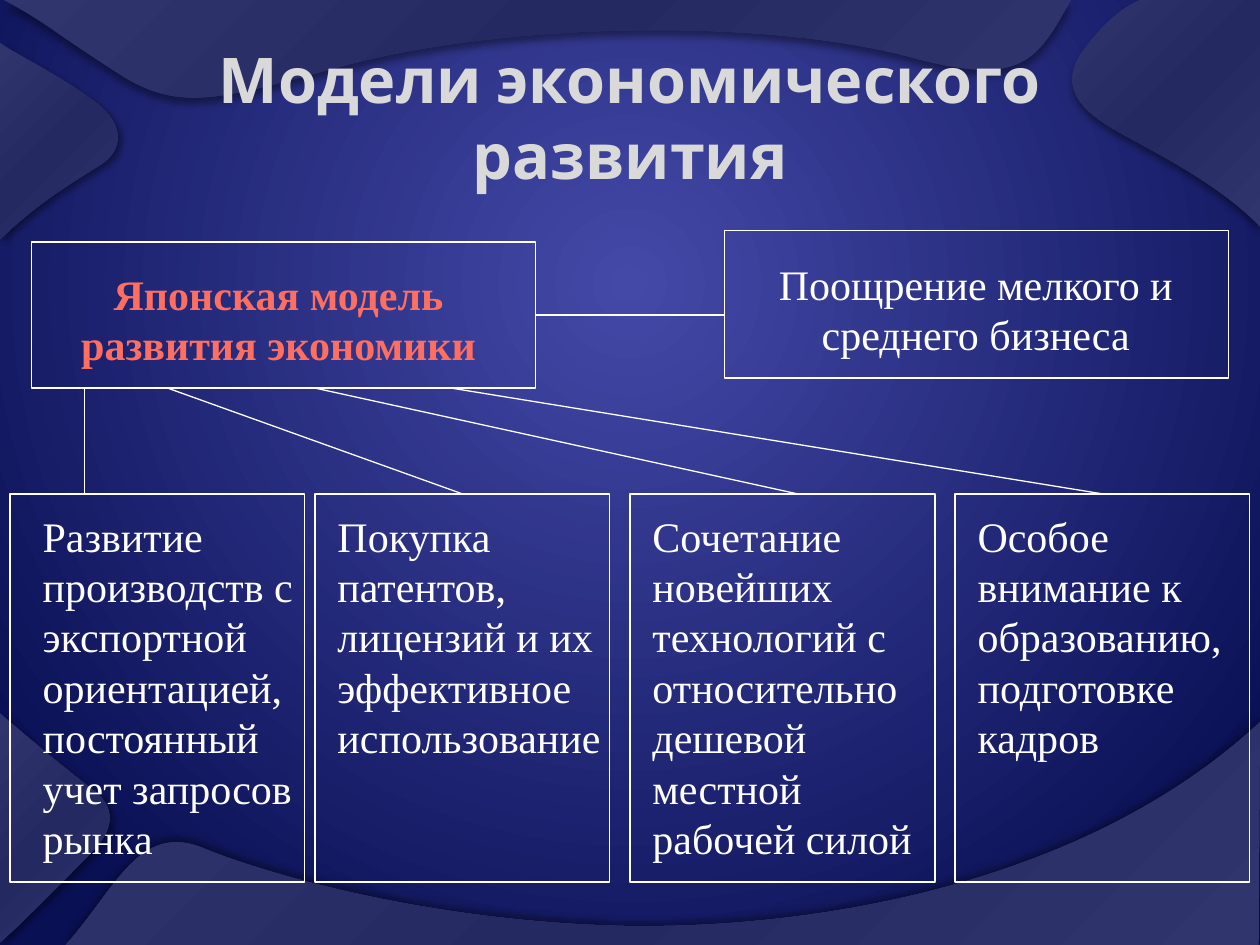
from dataclasses import dataclass

from lxml import etree
from pptx import Presentation
from pptx.dml.color import RGBColor
from pptx.enum.shapes import MSO_CONNECTOR, MSO_SHAPE
from pptx.enum.text import MSO_ANCHOR, MSO_AUTO_SIZE, PP_ALIGN
from pptx.oxml.ns import qn
from pptx.util import Inches, Pt


@dataclass(frozen=True)
class Theme:
    white: RGBColor = RGBColor(0xFF, 0xFF, 0xFF)
    coral: RGBColor = RGBColor(0xFF, 0x6F, 0x61)
    backdrop: tuple = ((0, "4449A8"), (100, "0A1054"))
    ribbon: tuple = ((0, "30356E"), (50, "252961"), (100, "30356E"))
    silver: tuple = ((0, "FFFFFF"), (44, "D9D9D9"), (100, "808080"))
    title_font: str = "Cabin"
    body_font: str = "Times New Roman"
    title_size: int = 36
    body_size: int = 24
    line_width: float = 0.75


T = Theme()


def set_gradient(fill, element, stops, angle=None):
    """Fill with the stops, linear at the angle or circular without one."""
    fill.gradient()
    grad = next(element.iter(qn("a:gradFill")))
    for child in list(grad):
        grad.remove(child)
    stop_list = etree.SubElement(grad, qn("a:gsLst"))
    for pos, color in stops:
        gs = etree.SubElement(stop_list, qn("a:gs"), pos=str(pos * 1000))
        etree.SubElement(gs, qn("a:srgbClr"), val=color)
    if angle is None:
        shade = etree.SubElement(grad, qn("a:path"), path="circle")
        etree.SubElement(shade, qn("a:fillToRect"),
                         l="50000", t="30000", r="50000", b="70000")
    else:
        etree.SubElement(grad, qn("a:lin"), ang=str(angle * 60000), scaled="0")


def add_text(text, left, top, width, height, font=T.body_font, size=T.body_size,
             color=T.white, bold=False, align=PP_ALIGN.LEFT,
             anchor=MSO_ANCHOR.TOP, fit=MSO_AUTO_SIZE.SHAPE_TO_FIT_TEXT):
    sp = s.shapes.add_textbox(Inches(left), Inches(top), Inches(width), Inches(height))
    tf = sp.text_frame
    tf.word_wrap = True
    tf.auto_size = fit
    tf.vertical_anchor = anchor
    p = tf.paragraphs[0]
    p.alignment = align
    r = p.add_run()
    r.text = text
    r.font.name, r.font.size, r.font.bold = font, Pt(size), bold
    if isinstance(color, RGBColor):
        r.font.color.rgb = color
    else:
        set_gradient(r.font.fill, sp.element, color, 90)


prs = Presentation()
prs.slide_width, prs.slide_height = Inches(10), Inches(7.5)
s = prs.slides.add_slide(prs.slide_layouts[6])
set_gradient(s.background.fill, s.element, T.backdrop)

# Ribbons: shadow direction, start point, then line ends (2 numbers) or curves (6)
ribbons = [
    (90, (0.03, 0), [(0.37, 0.18, 0.43, 0.26, 1, 0.62), (1.46, 0.89, 1.8, 0.77, 2.7, 0.53),
                     (4, 0.17, 6.09, 0.14, 7.25, 0.46), (8.12, 0.69, 8.23, 0.48, 8.5, 0),
                     (0.03, 0)]),
    (45, (0, 0.34), [(0, 1.9), (0.34, 1.57, 0.66, 1.4, 0.81, 1.3),
                     (0.97, 1.19, 0.99, 1, 0.78, 0.83), (0.53, 0.63, 0.16, 0.45, 0, 0.34)]),
    (45, (0, 7.48), [(0, 5.66), (0.37, 5.98, 0.57, 6.14, 0.74, 6.27),
                     (0.9, 6.39, 0.93, 6.56, 0.73, 6.76), (0.5, 7, 0.15, 7.35, 0, 7.48)]),
    (90, (9.05, 0), [(10.01, 0), (10.01, 0.59, 10, 1.21, 10, 1.8),
                     (9.59, 1.37, 8.93, 1.11, 8.71, 0.94), (8.43, 0.74, 8.5, 0.54, 8.59, 0.41),
                     (8.68, 0.29, 8.85, 0.08, 9.05, 0)]),
    (270, (0.52, 7.5), [(9.99, 7.52), (10, 5.73), (8.65, 6.99, 6.55, 7.37, 4.99, 7.35),
                        (3.42, 7.32, 2.12, 6.94, 1.61, 6.73), (1.1, 6.52, 0.91, 7.07, 0.52, 7.5)]),
]
for direction, start, segments in ribbons:
    points = [tuple(map(Inches, seg[i:i + 2])) for seg in segments
              for i in range(0, len(seg), 2)]
    builder = s.shapes.build_freeform(*map(Inches, start))
    builder.add_line_segments(points, close=True)
    sp = builder.convert_to_shape()
    # Merge the three straight steps of each curve into one Bezier segment
    steps = iter(list(sp.element.iter(qn("a:lnTo"))))
    for seg in segments:
        first = next(steps)
        if len(seg) == 6:
            curve = etree.Element(qn("a:cubicBezTo"))
            first.addprevious(curve)
            for step in (first, next(steps), next(steps)):
                curve.append(step[0])
                step.getparent().remove(step)
    sp.line.fill.background()
    set_gradient(sp.fill, sp.element, T.ribbon, 45)
    sp.shadow.inherit = False
    effects = next(sp.element.iter(qn("a:effectLst")))
    shadow = etree.SubElement(effects, qn("a:outerShdw"), blurRad=str(Pt(4)), dist=str(Pt(3)),
                              dir=str(direction * 60000), algn="ctr", rotWithShape="0")
    black = etree.SubElement(shadow, qn("a:srgbClr"), val="000000")
    etree.SubElement(black, qn("a:alpha"), val="40000")

add_text("Модели экономического развития", 0.75, 0.3, 8.5, 1.25, font=T.title_font,
         size=T.title_size, color=T.silver, bold=True, align=PP_ALIGN.CENTER,
         anchor=MSO_ANCHOR.MIDDLE, fit=MSO_AUTO_SIZE.NONE)

# Frames: the model, its companion on the right, and four columns below
BOTTOM, COLUMN_TOP = 3.08, 3.92
columns = [
    (0.08, 2.34, 0.24, 2.26, 2.9,
     "Развитие производств с экспортной ориентацией, постоянный учет запросов рынка"),
    (2.5, 2.34, 2.58, 2.42, 2.1, "Покупка патентов, лицензий и их эффективное использование"),
    (5, 2.42, 5.08, 2.5, 2.9,
     "Сочетание новейших технологий с относительно дешевой местной рабочей силой"),
    (7.58, 2.34, 7.66, 2.42, 2.1, "Особое внимание к образованию, подготовке кадров"),
]
boxes = [(0.25, 1.92, 4, 1.16), (5.75, 1.83, 4, 1.17)]
boxes += [(left, COLUMN_TOP, width, 3.08) for left, width, *_ in columns]
frames = []
for box in boxes:
    sp = s.shapes.add_shape(MSO_SHAPE.RECTANGLE, *map(Inches, box))
    sp.shadow.inherit = False
    sp.fill.background()
    sp.line.color.rgb = T.white
    sp.line.width = Pt(T.line_width)
    frames.append(sp)
model, support, *column_frames = frames

add_text("Японская модель развития экономики", 0.42, 2.08, 3.58, 0.9,
         color=T.coral, bold=True, align=PP_ALIGN.CENTER)
add_text("Поощрение мелкого и среднего бизнеса", 5.83, 2, 3.83, 0.9,
         align=PP_ALIGN.CENTER)
for _, _, left, width, height, text in columns:
    add_text(text, left, 4, width, height)

# Links: from, to, then the joined frame sides where an end is at a middle
links = [
    ((4.25, 2.5), (5.75, 2.5), (model, 3), None),
    ((0.67, BOTTOM), (0.67, COLUMN_TOP), None, None),
    ((1.33, BOTTOM), (3.67, COLUMN_TOP), None, (column_frames[1], 0)),
    ((2.5, BOTTOM), (6.33, COLUMN_TOP), None, None),
    ((3.58, BOTTOM), (8.75, COLUMN_TOP), None, (column_frames[3], 0)),
]
for start, end, begin_side, end_side in links:
    link = s.shapes.add_connector(MSO_CONNECTOR.STRAIGHT, *map(Inches, start + end))
    link.line.color.rgb = T.white
    link.line.width = Pt(T.line_width)
    etree.SubElement(link.element.spPr, qn("a:effectLst"))
    if begin_side:
        link.begin_connect(*begin_side)
    if end_side:
        link.end_connect(*end_side)

prs.save("out.pptx")
